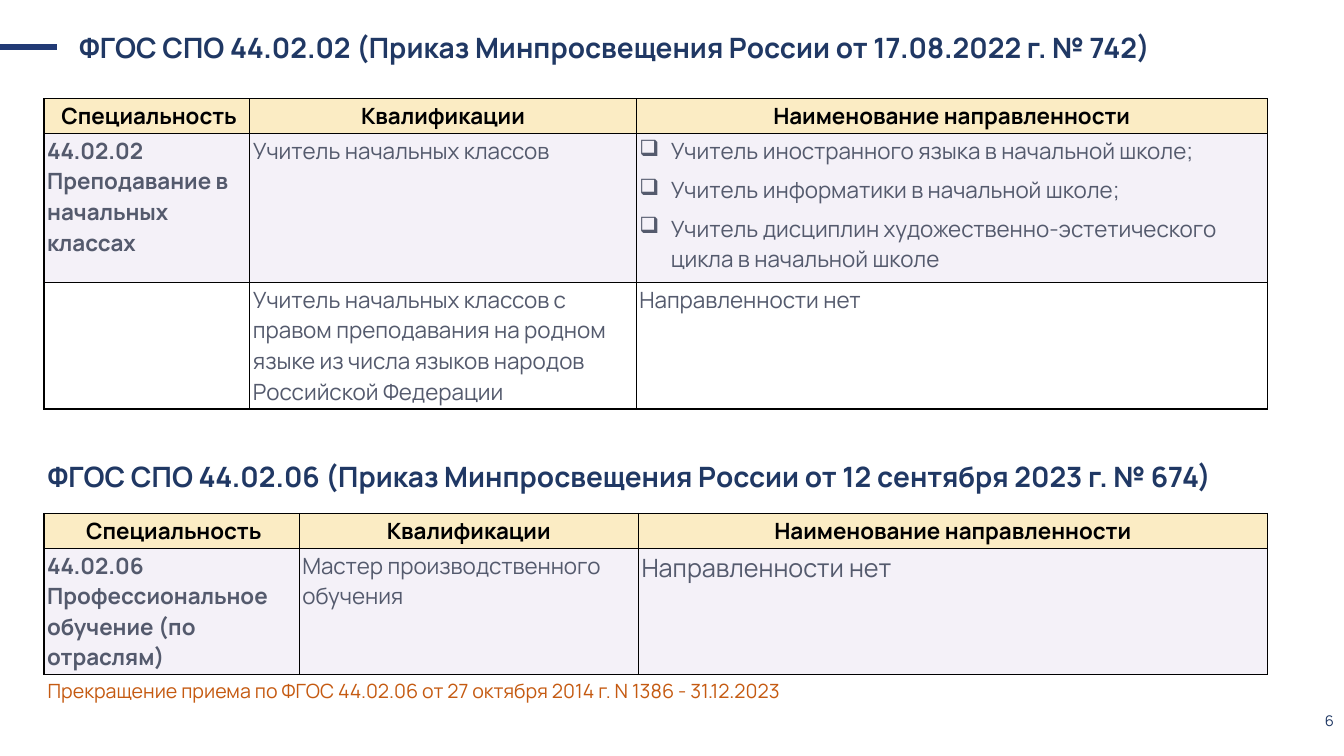
from dataclasses import dataclass

from lxml import etree
from pptx import Presentation, util as u
from pptx.dml.color import RGBColor
from pptx.enum import shapes, text
from pptx.oxml import ns

PX = 9525


@dataclass(frozen=True)
class Theme:
    face: str = "Manrope"
    navy: str = "203864"
    bar: str = "213A75"
    ink: str = "000000"
    gray: str = "545A6D"
    rust: str = "C55A11"
    cream: str = "FBECC4"
    lilac: str = "F4F1F8"
    white: str = "FFFFFF"
    title: float = 20
    large: float = 18
    body: float = 16
    note: float = 14
    page: float = 10.5


THEME = Theme()


@dataclass(frozen=True)
class Style:
    size: float
    color: str
    bold: bool = False
    align: text.PP_ALIGN = text.PP_ALIGN.LEFT
    bullet: str = ""
    lead: float = 1.0


@dataclass(frozen=True)
class Label:
    box: tuple[int, int, int, int]
    words: str
    style: Style
    anchor: text.MSO_ANCHOR = text.MSO_ANCHOR.MIDDLE


@dataclass(frozen=True)
class Cell:
    lines: tuple[str, ...]
    style: Style
    fill: str = THEME.lilac


@dataclass(frozen=True)
class Grid:
    left: int
    top: int
    cols: tuple[int, ...]
    rows: tuple[int, ...]
    cells: tuple[tuple[Cell, ...], ...]


TITLE = Style(THEME.title, THEME.navy, bold=True, lead=0.9)
HEAD = Style(THEME.body, THEME.ink, bold=True, align=text.PP_ALIGN.CENTER)
NAME = Style(THEME.body, THEME.gray, bold=True)
BODY = Style(THEME.body, THEME.gray)
LARGE = Style(THEME.large, THEME.gray)
LIST = Style(THEME.body, THEME.gray, bullet="❑")
NOTE = Style(THEME.note, THEME.rust)
PAGE = Style(THEME.page, THEME.navy, align=text.PP_ALIGN.RIGHT)

HEADS = tuple(
    Cell((word,), HEAD, THEME.cream)
    for word in (" Специальность", "Квалификации", "Наименование направленности")
)

LABELS = (
    Label((66, 14, 1178, 66), "ФГОС СПО 44.02.02 (Приказ Минпросвещения России от 17.08.2022 г. № 742)", TITLE),
    Label((36, 423, 1226, 66), "ФГОС СПО 44.02.06 (Приказ Минпросвещения России от 12 сентября 2023 г. № 674)", TITLE),
    Label((36, 642, 1170, 33), "Прекращение приема по ФГОС 44.02.06 от 27 октября 2014 г. N 1386 - 31.12.2023",
          NOTE, text.MSO_ANCHOR.TOP),
    Label((992, 667, 288, 38), "6", PAGE),
)

GRIDS = (
    Grid(42, 94, (196, 368, 601), (32, 142, 120), (
        HEADS,
        (
            Cell(("44.02.02 Преподавание в начальных классах",), NAME),
            Cell(("Учитель начальных классов",), BODY),
            Cell((
                "Учитель иностранного языка в начальной школе;",
                "Учитель информатики в начальной школе;",
                "Учитель дисциплин художественно-эстетического цикла в начальной школе",
            ), LIST),
        ),
        (
            Cell(("",), BODY, THEME.white),
            Cell(("Учитель начальных классов с правом преподавания на родном языке "
                  "из числа языков народов Российской Федерации",), BODY, THEME.white),
            Cell(("Направленности нет",), BODY, THEME.white),
        ),
    )),
    Grid(42, 489, (243, 323, 599), (32, 120), (
        HEADS,
        (
            Cell(("44.02.06", "Профессиональное обучение (по отраслям)"), NAME),
            Cell(("Мастер производственного обучения",), BODY),
            Cell(("Направленности нет",), LARGE),
        ),
    )),
)


def px(size: int) -> u.Emu:
    return u.Emu(size * PX)


def write(frame, lines: tuple[str, ...], style: Style) -> None:
    for i, line in enumerate(lines):
        para = frame.add_paragraph() if i else frame.paragraphs[0]
        para.text = line
        para.alignment = style.align
        para.line_spacing = style.lead
        if style.bullet:
            para.space_after = u.Pt(6)
            props = para._p.get_or_add_pPr()
            props.set("marL", str(px(30)))
            props.set("indent", str(px(-30)))
            etree.SubElement(props, ns.qn("a:buChar")).set("char", style.bullet)
        font = para.font
        font.name = THEME.face
        font.size = u.Pt(style.size)
        font.bold = style.bold
        font.color.rgb = RGBColor.from_string(style.color)


def label(slide, item: Label) -> None:
    frame = slide.shapes.add_textbox(*map(px, item.box)).text_frame
    frame.word_wrap = True
    frame.vertical_anchor = item.anchor
    write(frame, (item.words,), item.style)


def border(cell) -> None:
    props = cell._tc.get_or_add_tcPr()
    for i, side in enumerate("LRTB"):
        line = etree.Element(ns.qn(f"a:ln{side}"), w=str(u.Pt(1)))
        fill = etree.SubElement(line, ns.qn("a:solidFill"))
        etree.SubElement(fill, ns.qn("a:srgbClr")).set("val", THEME.ink)
        props.insert(i, line)


def grid(slide, item: Grid) -> None:
    table = slide.shapes.add_table(
        len(item.rows), len(item.cols), px(item.left), px(item.top),
        px(sum(item.cols)), px(sum(item.rows)),
    ).table
    table.first_row = table.horz_banding = False
    for col, width in zip(table.columns, item.cols):
        col.width = px(width)
    for row, height, cells in zip(table.rows, item.rows, item.cells):
        row.height = px(height)
        for cell, data in zip(row.cells, cells):
            cell.margin_left = cell.margin_right = px(3)
            cell.margin_top = cell.margin_bottom = px(2)
            if data.style is HEAD:
                cell.vertical_anchor = text.MSO_ANCHOR.MIDDLE
            cell.fill.solid()
            cell.fill.fore_color.rgb = RGBColor.from_string(data.fill)
            border(cell)
            write(cell.text_frame, data.lines, data.style)


def accent(slide) -> None:
    bar = slide.shapes.add_connector(shapes.MSO_CONNECTOR.STRAIGHT, px(0), px(45), px(54), px(45))
    bar.line.width = u.Pt(4.5)
    bar.line.color.rgb = RGBColor.from_string(THEME.bar)
    etree.SubElement(bar._element.spPr, ns.qn("a:effectLst"))


def main() -> None:
    deck = Presentation()
    deck.slide_width, deck.slide_height = px(1280), px(720)
    slide = deck.slides.add_slide(deck.slide_layouts[6])
    accent(slide)
    for item in GRIDS:
        grid(slide, item)
    for item in LABELS:
        label(slide, item)
    deck.save("out.pptx")


if __name__ == "__main__":
    main()
